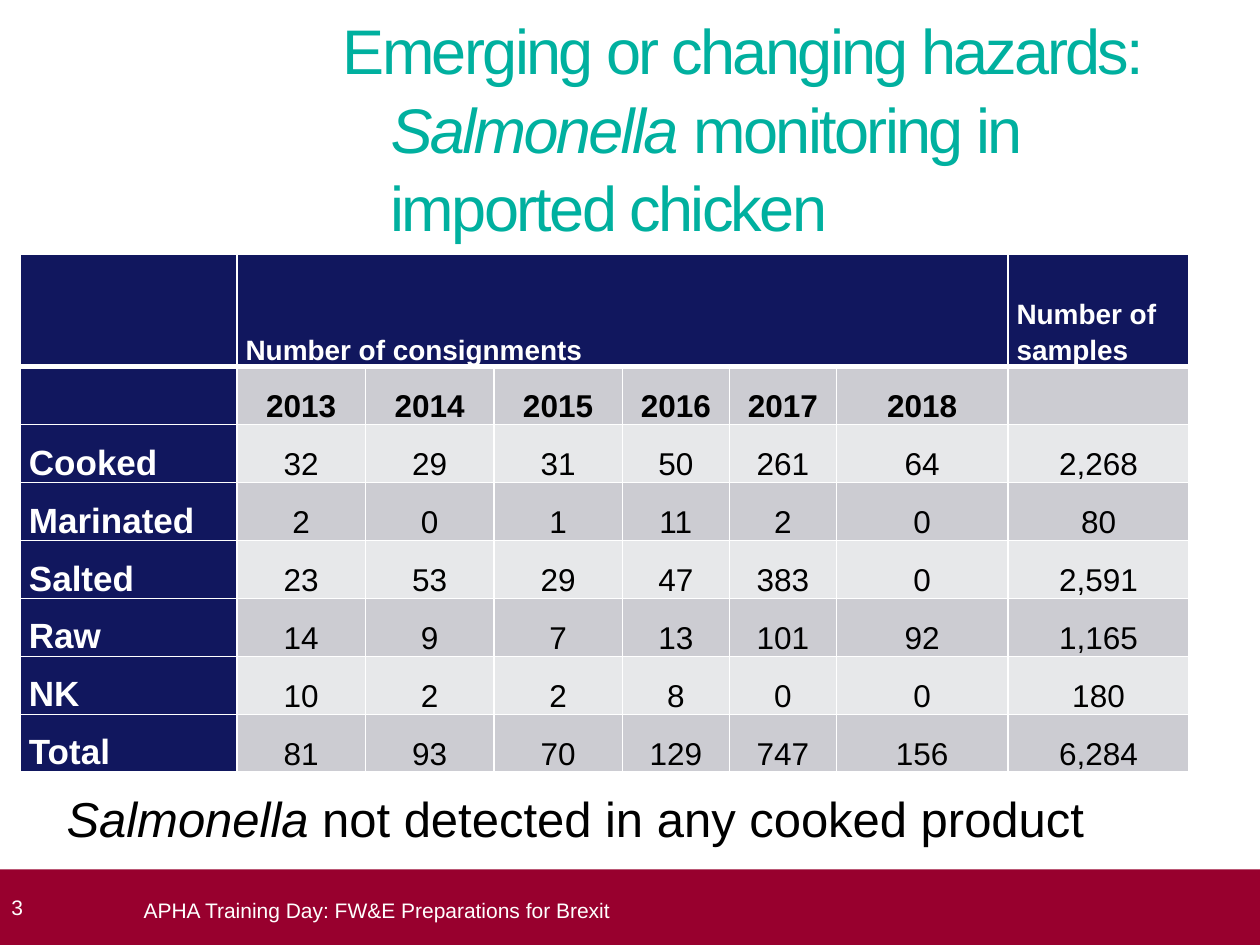
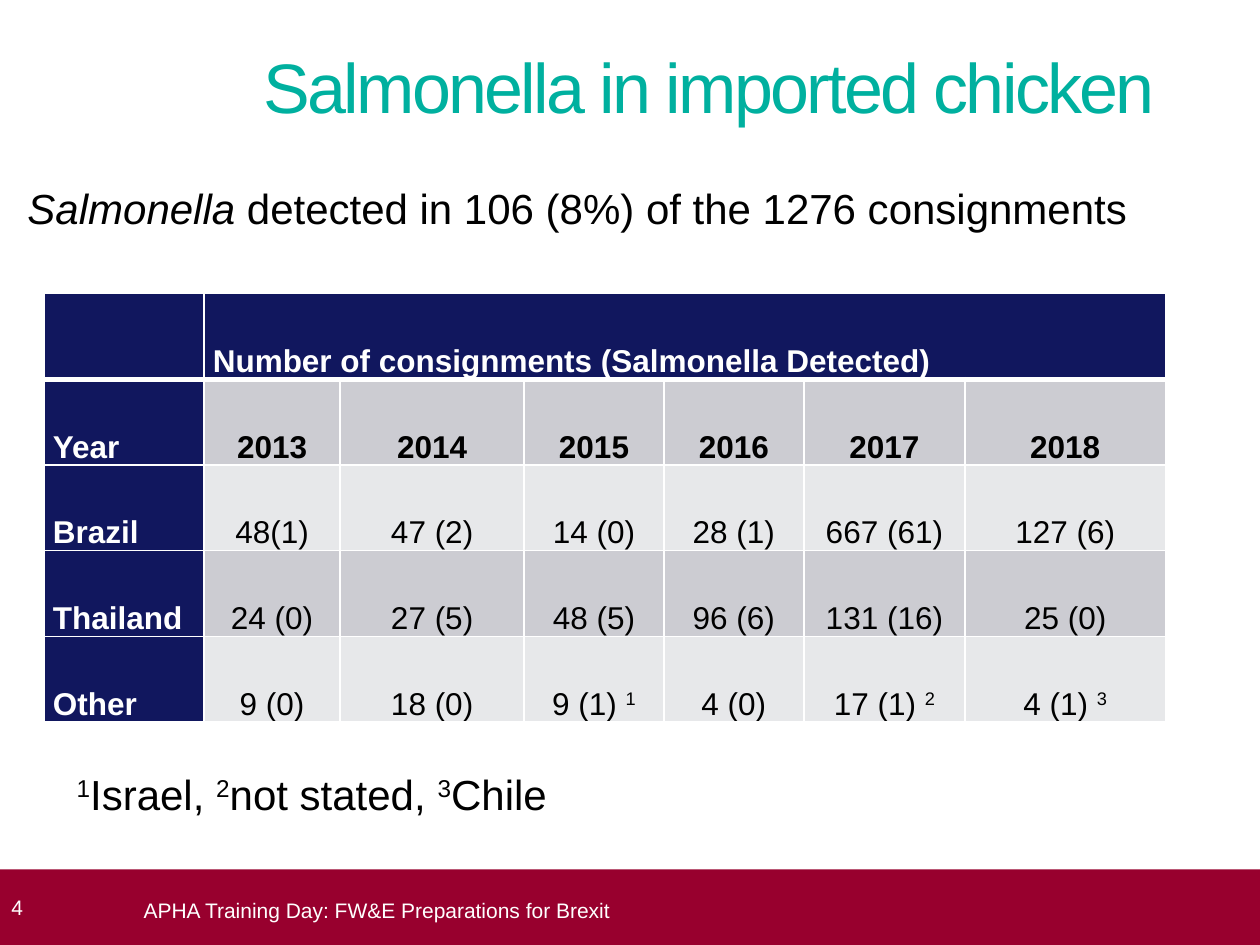
from lxml import etree
from pptx import Presentation
from pptx import util as u
from pptx.dml.color import RGBColor
from pptx.enum import shapes, text
from pptx.oxml import ns

# Shared look
TEAL = RGBColor(0x00, 0xB0, 0x9F)
NAVY = RGBColor(0x11, 0x17, 0x5E)
CRIMSON = RGBColor(0x98, 0x00, 0x2E)
GREY = RGBColor(0xCC, 0xCC, 0xD2)
PALE = RGBColor(0xE7, 0xE8, 0xEA)
WHITE = RGBColor(0xFF, 0xFF, 0xFF)
BLACK = RGBColor(0x00, 0x00, 0x00)
FONT = "Arial"
WIDTH, HEIGHT = 10, 7.5
BAND_TOP = 0.92 * HEIGHT
FOOTER = "APHA Training Day: FW&E Preparations for Brexit"
YEARS = ["2013", "2014", "2015", "2016", "2017", "2018"]

# Content: a text is a string or a list of (string, style) spans
SLIDES = [
    {
        "number": "3",
        "title": [("Emerging or changing hazards:\v", ""), ("Salmonella", "italic"),
                  (" monitoring in \vimported chicken", "")],
        "title_place": (2.72, 0.04, 7.01, 0.71), "title_size": 36,
        "table_place": (0.16, 2.02),
        "columns": [1.72, 1.02, 1.02, 1.02, 0.85, 0.85, 1.36, 1.44],
        "row_heights": [0.89] + [0.46] * 7,
        "heading_size": 16, "label_size": 20,
        "rows": [
            ["", "Number of consignments", "", "", "", "", "", "Number of samples"],
            ["", *YEARS, ""],
            ["Cooked", "32", "29", "31", "50", "261", "64", "2,268"],
            ["Marinated", "2", "0", "1", "11", "2", "0", "80"],
            ["Salted", "23", "53", "29", "47", "383", "0", "2,591"],
            ["Raw", "14", "9", "7", "13", "101", "92", "1,165"],
            ["NK", "10", "2", "2", "8", "0", "0", "180"],
            ["Total", "81", "93", "70", "129", "747", "156", "6,284"],
        ],
        "remarks": [
            ((0.43, 6.21, 8.74, 0.57), 28,
             [("Salmonella", "italic"), (" not detected in any cooked product", "")]),
        ],
    },
    {
        "number": "4",
        "title": "Salmonella in imported chicken",
        "title_place": (2.09, 0.29, 7.91, 0.71), "title_size": 40,
        "table_place": (0.35, 2.33),
        "columns": [1.27, 1.08, 1.46, 1.11, 1.11, 1.28, 1.59],
        "row_heights": [0.68] * 5,
        "heading_size": 18, "label_size": 18,
        "rows": [
            ["", "Number of consignments (Salmonella Detected)", "", "", "", "", ""],
            ["Year", *YEARS],
            ["Brazil", "48(1)", "47 (2)", "14 (0)", "28 (1)", "667 (61)", "127 (6)"],
            ["Thailand", "24 (0)", "27 (5)", "48 (5)", "96 (6)", "131 (16)", "25 (0)"],
            ["Other", "9 (0)", "18 (0)", [("9 (1) ", ""), ("1", "super")], "4 (0)",
             [("17 (1) ", ""), ("2", "super")], [("4 (1) ", ""), ("3", "super")]],
        ],
        "remarks": [
            ((0.51, 6.05, 9.13, 0.5), 24,
             [("1", "super"), ("Israel, ", ""), ("2", "super"), ("not stated, ", ""),
              ("3", "super"), ("Chile", "")]),
            ((0.12, 1.4, 9.13, 0.5), 24,
             [("Salmonella", "italic"),
              (" detected in 106 (8%) of the 1276 consignments", "")]),
        ],
    },
]


def inches(values):
    return [u.Inches(value) for value in values]


def write(frame, content, size, color=BLACK, bold=False, align=text.PP_ALIGN.LEFT,
          anchor=text.MSO_ANCHOR.TOP, spacing=None, after=None, tracking=None):
    """Fill the first paragraph of a frame or cell and return it."""
    frame.vertical_anchor = anchor
    para = getattr(frame, "text_frame", frame).paragraphs[0]
    para.alignment, para.line_spacing = align, spacing
    if after is not None:
        para.space_after = u.Pt(after)
    for words, style in [(content, "")] if isinstance(content, str) else content:
        for index, part in enumerate(words.split("\v")):
            if index:
                para.add_line_break()
            if not part:
                continue
            span = para.add_run()
            span.text = part
            font = span.font
            font.name, font.size, font.bold = FONT, u.Pt(size), bold
            font.color.rgb, font.italic = color, style == "italic"
            if style == "super":
                font._element.set("baseline", "30000")
            if tracking:
                font._element.set("spc", str(int(tracking * 100)))
    return para


def set_margins(frame, left=0, top=0, right=0, bottom=0):
    (frame.margin_left, frame.margin_top,
     frame.margin_right, frame.margin_bottom) = inches((left, top, right, bottom))


def add_text(page, place, content, size, inset=True, **style):
    frame = page.shapes.add_textbox(*inches(place)).text_frame
    frame.word_wrap = True
    if not inset:
        set_margins(frame)
    write(frame, content, size, **style)


def add_title(page, content, place, size):
    title = page.shapes.title
    title.left, title.top, title.width, title.height = inches(place)
    frame = title.text_frame
    frame.auto_size, frame.word_wrap = text.MSO_AUTO_SIZE.NONE, True
    set_margins(frame, top=0.03)
    para = write(frame, content, size, color=TEAL, spacing=1.04, tracking=-1.5)
    # Hanging indent
    hang = u.Inches(0.38)
    properties = para._p.get_or_add_pPr()
    properties.set("marL", str(hang))
    properties.set("indent", str(-hang))


def add_footer(page, number):
    band = page.shapes.add_shape(
        shapes.MSO_SHAPE.RECTANGLE, *inches((0, BAND_TOP, WIDTH, HEIGHT - BAND_TOP)))
    band.shadow.inherit = False
    band.fill.solid()
    band.fill.fore_color.rgb = CRIMSON
    band.line.fill.background()
    set_margins(band.text_frame, left=0.09, right=0.1)
    write(band.text_frame, number, 12, color=WHITE, anchor=text.MSO_ANCHOR.MIDDLE)
    add_text(page, (1.14, 6.95, 8.43, 0.55), FOOTER, 12, inset=False,
             color=WHITE, anchor=text.MSO_ANCHOR.MIDDLE)


def set_borders(cell, **widths):
    """White borders, 1 pt unless a side is given its own width."""
    properties = cell._tc.get_or_add_tcPr()
    for side in "LRTB":
        line = etree.SubElement(properties, ns.qn(f"a:ln{side}"),
                                w=str(u.Pt(widths.get(side, 1))))
        fill = etree.SubElement(line, ns.qn("a:solidFill"))
        etree.SubElement(fill, ns.qn("a:srgbClr"), val=str(WHITE))


def add_table(page, place, columns, row_heights, rows, heading_size, label_size):
    size = (sum(columns), sum(row_heights))
    table = page.shapes.add_table(len(rows), len(columns), *inches(place + size)).table
    for column, width in zip(table.columns, columns):
        column.width = u.Inches(width)
    for row, height in zip(table.rows, row_heights):
        row.height = u.Inches(height)
    for r, values in enumerate(rows):
        for c, value in enumerate(values):
            cell = table.cell(r, c)
            heading, label = r == 0, c == 0
            set_borders(cell, **({"B": 3} if heading else {"T": 3} if r == 1 else {}))
            cell.fill.solid()
            cell.fill.fore_color.rgb = NAVY if heading or label else GREY if r % 2 else PALE
            set_margins(cell, left=0.07, right=0.07)
            if value:
                write(cell, value,
                      heading_size if heading else label_size if label else 18,
                      color=WHITE if heading or label else BLACK,
                      bold=label or r < 2,
                      align=text.PP_ALIGN.LEFT if heading or label else text.PP_ALIGN.CENTER,
                      anchor=text.MSO_ANCHOR.BOTTOM, spacing=1.15, after=10)
    # One heading over all the years
    table.cell(0, 1).merge(table.cell(0, len(YEARS)))


def main():
    deck = Presentation()
    deck.slide_width, deck.slide_height = inches((WIDTH, HEIGHT))
    for item in SLIDES:
        page = deck.slides.add_slide(deck.slide_layouts.get_by_name("Title Only"))
        add_title(page, item["title"], item["title_place"], item["title_size"])
        add_table(page, item["table_place"], item["columns"], item["row_heights"],
                  item["rows"], item["heading_size"], item["label_size"])
        for place, size, content in item["remarks"]:
            add_text(page, place, content, size)
        add_footer(page, item["number"])
    deck.save("out.pptx")


if __name__ == "__main__":
    main()
